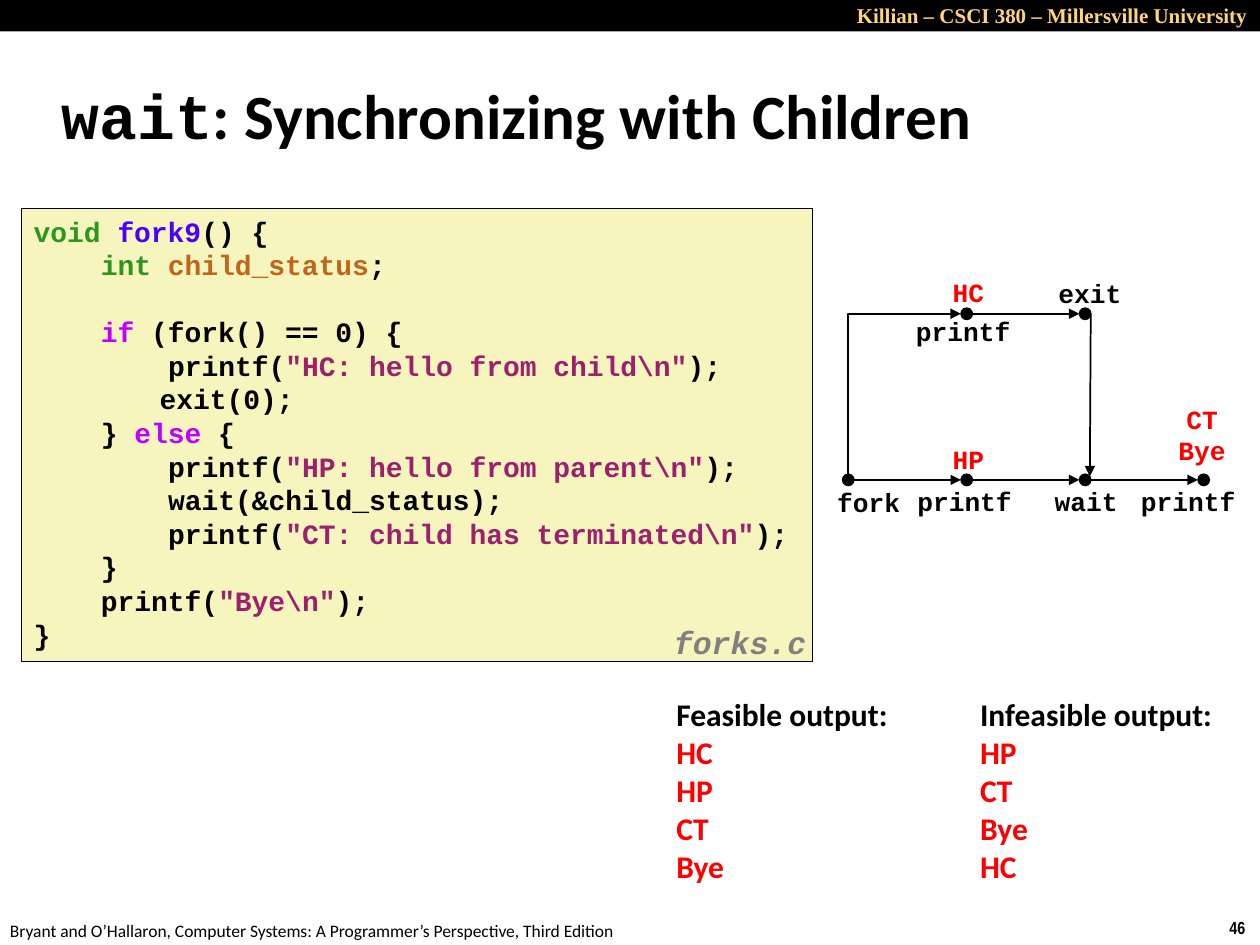
import pptx
import pptx.util
import pptx.dml.color
import pptx.enum.shapes
import pptx.enum.text
import pptx.oxml.ns
import lxml.etree

Pt = pptx.util.Pt
RGB = pptx.dml.color.RGBColor.from_string
SHAPE = pptx.enum.shapes.MSO_SHAPE
CONNECTOR = pptx.enum.shapes.MSO_CONNECTOR
ALIGN = pptx.enum.text.PP_ALIGN
ANCHOR = pptx.enum.text.MSO_ANCHOR
qn = pptx.oxml.ns.qn

COLORS = {
    "black": "000000", "gold": "FFD579", "cream": "F6F5BD", "red": "FF0000",
    "grey": "808080", "type": "2D961E", "function": "4A00FF",
    "variable": "C1651C", "keyword": "C200FF", "string": "9D206F",
}
MONO = "Courier New"

deck = pptx.Presentation()
deck.slide_width, deck.slide_height = Pt(720), Pt(540)
slide = deck.slides.add_slide(deck.slide_layouts[5])
shapes = slide.shapes


def add_text(left, top, width, height, lines, size, font,
             align=ALIGN.LEFT, bold=True, wrap=False):
    frame = shapes.add_textbox(Pt(left), Pt(top), Pt(width), Pt(height)).text_frame
    frame.word_wrap = wrap
    for number, (text, color) in enumerate(lines):
        line = frame.add_paragraph() if number else frame.paragraphs[0]
        line.text = text
        line.alignment = align
        line.font.size, line.font.name, line.font.bold = Pt(size), font, bold
        line.font.color.rgb = RGB(COLORS[color])
    return frame


def add_arrow(kind, x1, y1, x2, y2):
    arrow = shapes.add_connector(kind, Pt(x1), Pt(y1), Pt(x2), Pt(y2))
    arrow.line.width = Pt(1)
    arrow.line.color.rgb = RGB(COLORS["black"])
    lxml.etree.SubElement(arrow.line._get_or_add_ln(), qn("a:tailEnd"), type="triangle")
    lxml.etree.SubElement(arrow._element.spPr, qn("a:effectLst"))
    return arrow


header = shapes.add_shape(SHAPE.RECTANGLE, 0, 0, Pt(720), Pt(18))
header.shadow.inherit = False
header.fill.solid()
header.fill.fore_color.rgb = RGB(COLORS["black"])
header.line.fill.background()
add_text(419.8, -2.2, 300.2, 21.6,
         [("Killian – CSCI 380 – Millersville University", "gold")],
         12, "Times New Roman", ALIGN.RIGHT, wrap=True)
add_text(695.5, 520.5, 24.5, 19.4, [("46", "black")], 10, "Arial Narrow")
add_text(-1.4, 522, 365.8, 19.4,
         [("Bryant and O’Hallaron, Computer Systems: "
           "A Programmer’s Perspective, Third Edition", "black")],
         10, "Calibri", bold=False)

title = shapes.title
title.left, title.top, title.width, title.height = Pt(28), Pt(35.3), Pt(597.6), Pt(59.8)
title.text_frame.vertical_anchor = ANCHOR.MIDDLE
heading = title.text_frame.paragraphs[0]
heading.alignment = ALIGN.LEFT
heading.font.size, heading.font.bold = Pt(36), True
heading.font.color.rgb = RGB(COLORS["black"])
for text, font in [("wait", MONO), (": Synchronizing with Children", "Calibri")]:
    run = heading.add_run()
    run.text = text
    run.font.name = font

INDENT = 38.4
code = [
    (0, [("void ", "type"), ("fork9", "function"), ("() {", "black")]),
    (INDENT, [("int ", "type"), ("child_status", "variable"), (";", "black")]),
    (INDENT, [("if", "keyword"), (" (fork() == 0) {", "black")]),
    (2 * INDENT, [("printf(", "black"), ('"HC: hello from child\\n"', "string"), (");", "black")]),
    (72, [("exit(0);", "black")]),
    (INDENT, [("} ", "black"), ("else", "keyword"), (" {", "black")]),
    (2 * INDENT, [("printf(", "black"), ('"HP: hello from parent\\n"', "string"), (");", "black")]),
    (2 * INDENT, [("wait(&child_status);", "black")]),
    (2 * INDENT, [("printf(", "black"), ('"CT: child has terminated\\n"', "string"), (");", "black")]),
    (INDENT, [("}", "black")]),
    (INDENT, [("printf(", "black"), ('"Bye\\n"', "string"), (");", "black")]),
    (0, [("}", "black")]),
]
listing = shapes.add_shape(SHAPE.RECTANGLE, Pt(12.2), Pt(118.8), Pt(452.2), Pt(259.2))
listing.shadow.inherit = False
listing.fill.solid()
listing.fill.fore_color.rgb = RGB(COLORS["cream"])
listing.line.color.rgb = RGB(COLORS["black"])
listing.line.width = Pt(0.25)
listing.text_frame.word_wrap = False
listing.text_frame.vertical_anchor = ANCHOR.TOP
for number, (indent, parts) in enumerate(code):
    frame = listing.text_frame
    line = frame.add_paragraph() if number else frame.paragraphs[0]
    line.alignment = ALIGN.LEFT
    line.font.size, line.font.name, line.font.bold = Pt(16), MONO, True
    line._p.get_or_add_pPr().set("marL", str(Pt(indent)))
    if parts[0][0] == "if":
        line.space_before = Pt(19.2)
    for text, color in parts:
        run = line.add_run()
        run.text = text
        run.font.color.rgb = RGB(COLORS[color])

columns = [484.7 + 67.7 * step for step in range(4)]
child_y, parent_y = 179.3, 274.2
radius = 3.3
nodes = [(x, parent_y) for x in columns] + [(x, child_y) for x in columns[1:3]]
for x, y in nodes:
    dot = shapes.add_shape(SHAPE.OVAL, Pt(x - radius), Pt(y - radius),
                           Pt(2 * radius), Pt(2 * radius))
    dot.shadow.inherit = False
    dot.fill.solid()
    dot.fill.fore_color.rgb = RGB(COLORS["black"])
    dot.line.color.rgb = RGB(COLORS["black"])
    dot.line.width = Pt(0.75)

for (x1, y1), (x2, y2) in zip(nodes, nodes[1:]):
    if y1 == y2:
        add_arrow(CONNECTOR.STRAIGHT, x1 + radius, y1, x2 - radius, y2)
add_arrow(CONNECTOR.STRAIGHT, 623.3, child_y, 622.8, parent_y - 2)

start_x, start_y = columns[0], parent_y - radius
end_x, end_y = columns[1] - radius, child_y
middle_x, middle_y = (start_x + end_x) / 2, (start_y + end_y) / 2
half_rise, half_run = (start_y - end_y) / 2, (end_x - start_x) / 2
branch = add_arrow(CONNECTOR.ELBOW, middle_x + half_rise, middle_y + half_run,
                   middle_x - half_rise, middle_y - half_run)
branch._element.spPr.find(qn("a:prstGeom")).set("prst", "bentConnector2")
branch._element.spPr.find(qn("a:xfrm")).set("rot", "5400000")

labels = [
    (496.4, 274.3, 58, ["fork"], "black"),
    (551.2, 273.6, 70, ["printf"], "black"),
    (620.6, 273.6, 70, ["wait"], "black"),
    (679, 273.6, 70, ["printf"], "black"),
    (550.4, 176.4, 74, ["printf"], "black"),
    (622.8, 154.8, 70, ["exit"], "black"),
    (553.3, 249.8, 32.4, ["HP"], "red"),
    (553.3, 154.1, 32.4, ["HC"], "red"),
    (686.9, 226.8, 41.8, ["CT", "Bye"], "red"),
]
for center, top, width, words, color in labels:
    add_text(center - width / 2, top, width, 7.2 + 18 * len(words),
             [(word, color) for word in words], 15, MONO, ALIGN.CENTER)

file_name = add_text(378, 354.2, 95, 28.1, [("forks.c", "grey")], 18, MONO).paragraphs[0]
file_name.font.italic = True
file_name.line_spacing = 0.94

outputs = [
    (379.4, 136.8, "Feasible output:", ["HC", "HP", "CT", "Bye"]),
    (553, 149, "Infeasible output:", ["HP", "CT", "Bye", "HC"]),
]
for left, width, caption, order in outputs:
    add_text(left, 393.8, width, 116.6,
             [(caption, "black")] + [(word, "red") for word in order], 18, "Calibri")

deck.save("out.pptx")
